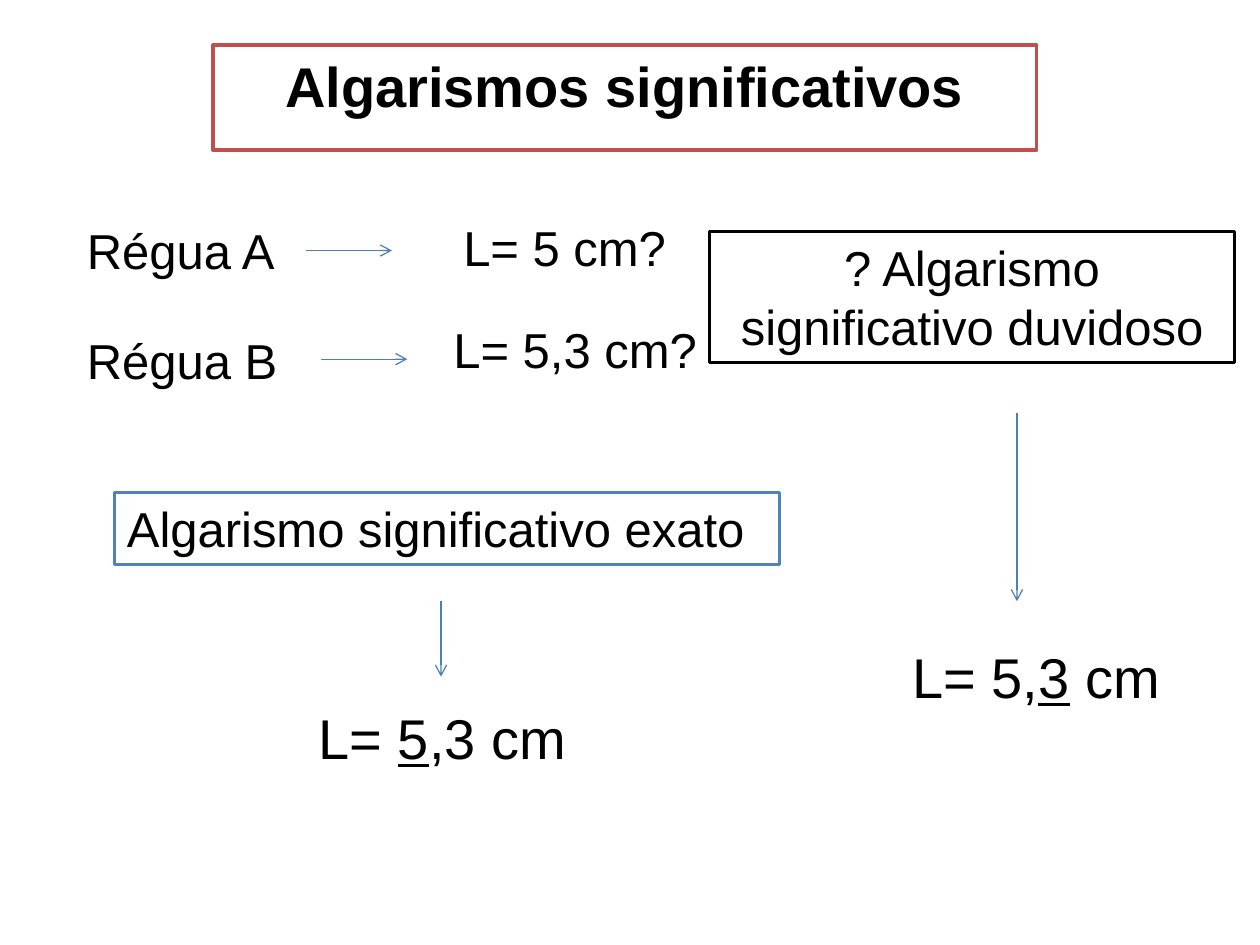
from pptx import Presentation
from pptx.dml.color import RGBColor
from pptx.enum.shapes import MSO_CONNECTOR, MSO_SHAPE
from pptx.enum.text import MSO_ANCHOR, MSO_AUTO_SIZE, PP_ALIGN
from pptx.oxml.ns import qn
from pptx.util import Cm, Pt
from lxml.etree import SubElement

COLORS = {
    "white": "FFFFFF",
    "black": "000000",
    "red": "C0504D",
    "blue": "4F81BD",
    "arrow": "4B7EBC",
}


class SlideBuilder:
    font = "Arial"
    body_size = 28
    large_size = 32

    def __init__(self, slide):
        self.slide = slide

    def color(self, name):
        return RGBColor.from_string(COLORS[name])

    def set_text(self, shape, parts, size, align=PP_ALIGN.LEFT, bold=False, wrap=True):
        """Fill a shape with text; parts alternate plain and underlined."""
        frame = shape.text_frame
        frame.word_wrap = wrap
        frame.auto_size = MSO_AUTO_SIZE.SHAPE_TO_FIT_TEXT
        frame.vertical_anchor = MSO_ANCHOR.TOP
        paragraph = frame.paragraphs[0]
        paragraph.alignment = align
        paragraph.font.name = self.font
        paragraph.font.size = Pt(size)
        paragraph.font.bold = bold
        paragraph.font.color.rgb = self.color("black")
        for index, part in enumerate(parts):
            run = paragraph.add_run()
            run.text = part
            if index % 2:
                run.font.underline = True

    def outline(self, shape, line):
        shape.fill.solid()
        shape.fill.fore_color.rgb = self.color("white")
        shape.line.color.rgb = self.color(line)
        shape.line.width = Pt(2)

    def title(self, text, left, top, width, height, line):
        title = self.slide.shapes.title
        title.left, title.top = Cm(left), Cm(top)
        title.width, title.height = Cm(width), Cm(height)
        self.outline(title, line)
        self.set_text(title, [text], self.large_size, PP_ALIGN.CENTER, bold=True)

    def label(self, parts, left, top, width, height=1.45, size=body_size):
        label = self.slide.shapes.add_textbox(Cm(left), Cm(top), Cm(width), Cm(height))
        self.set_text(label, parts, size, wrap=False)

    def box(self, text, left, top, width, height, line, align=PP_ALIGN.LEFT):
        box = self.slide.shapes.add_shape(
            MSO_SHAPE.RECTANGLE, Cm(left), Cm(top), Cm(width), Cm(height))
        box.shadow.inherit = False
        self.outline(box, line)
        self.set_text(box, [text], self.body_size, align)

    def arrow(self, x, y, dx=0, dy=0):
        arrow = self.slide.shapes.add_connector(
            MSO_CONNECTOR.STRAIGHT, Cm(x), Cm(y), Cm(x + dx), Cm(y + dy))
        arrow.line.color.rgb = self.color("arrow")
        arrow.line.width = Pt(0.75)
        properties = arrow._element.spPr
        SubElement(properties.find(qn("a:ln")), qn("a:tailEnd"), type="arrow")
        SubElement(properties, qn("a:effectLst"))


def main():
    presentation = Presentation()
    presentation.slide_width, presentation.slide_height = Cm(25.4), Cm(19.05)
    title_only = presentation.slide_layouts[5]
    builder = SlideBuilder(presentation.slides.add_slide(title_only))

    builder.title("Algarismos significativos", 4.29, 0.91, 16.61, 1.63, "red")

    # Readings from the two rulers
    builder.label(["Régua A"], 1.5, 4.32, 4.57)
    builder.arrow(6.17, 5.05, dx=1.73)
    builder.label(["L= 5 cm?"], 9.09, 4.27, 4.65)

    builder.label(["Régua B"], 1.5, 6.53, 4.67)
    builder.arrow(6.48, 7.24, dx=1.73)
    builder.label(["L= 5,3 cm?"], 8.89, 6.32, 5.49)

    # Doubtful digit
    builder.box("? Algarismo significativo duvidoso",
                14.3, 4.67, 10.59, 2.64, "black", PP_ALIGN.CENTER)
    builder.arrow(20.5, 8.33, dy=3.79)
    builder.label(["L= 5,", "3", " cm"], 18.14, 12.83, 5.54, 1.63, builder.large_size)

    # Exact digit
    builder.box("Algarismo significativo exato", 2.31, 9.93, 13.41, 1.45, "blue")
    builder.arrow(8.89, 12.12, dy=1.52)
    builder.label(["L= ", "5", ",3 cm"], 6.17, 14.05, 5.54, 1.63, builder.large_size)

    presentation.save("out.pptx")


if __name__ == "__main__":
    main()
